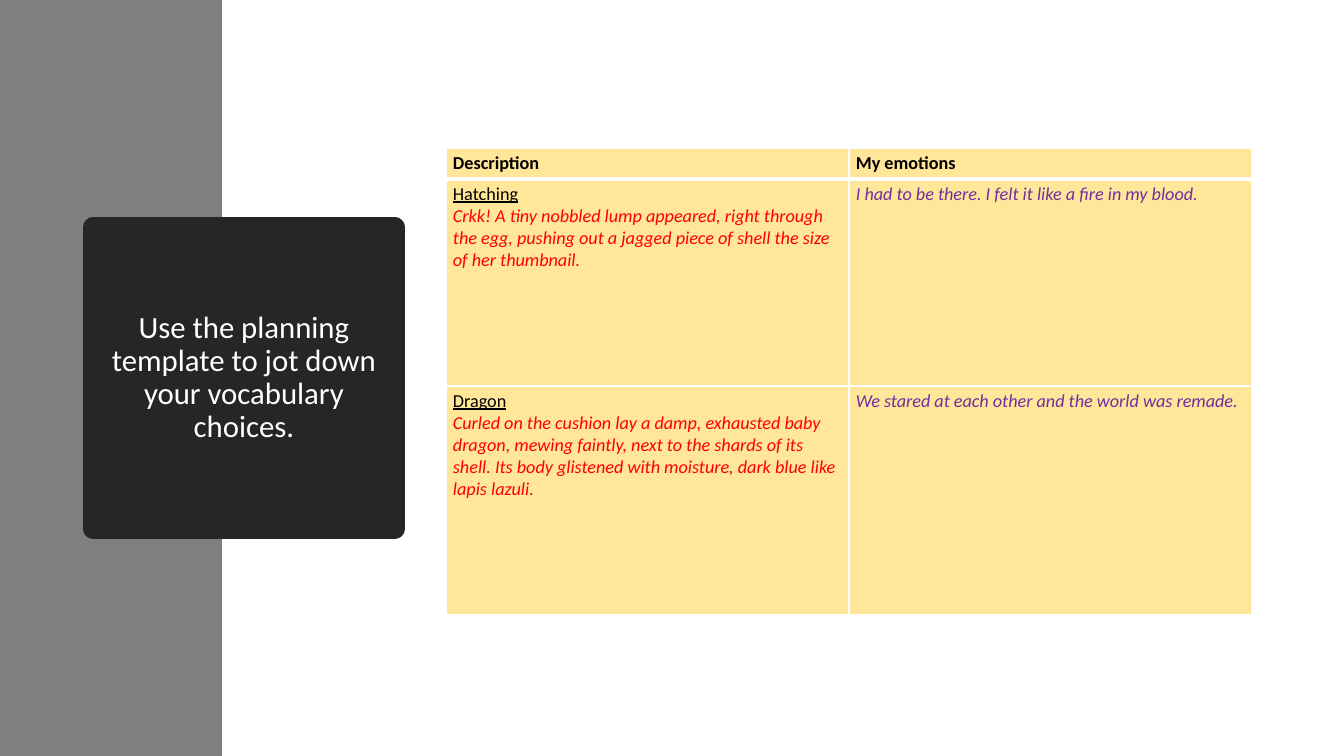
from dataclasses import dataclass
from lxml import etree
from pptx import Presentation
from pptx.dml.color import RGBColor
from pptx.enum.shapes import MSO_SHAPE
from pptx.enum.text import MSO_ANCHOR, PP_ALIGN
from pptx.oxml.ns import qn
from pptx.util import Pt

RECT = MSO_SHAPE.RECTANGLE
MIDDLE = MSO_ANCHOR.MIDDLE
LEFT, CENTER = PP_ALIGN.LEFT, PP_ALIGN.CENTER
SCALE = 914400 / 100.8


@dataclass(frozen=True)
class Theme:
    font: str = "Calibri"
    white: str = "FFFFFF"
    black: str = "000000"
    gray: str = "7F7F7F"
    dark: str = "262626"
    sand: str = "FFE699"
    red: str = "FF0000"
    purple: str = "7030A0"
    title: int = 22
    body: int = 13
    edge: float = 13.75
    thin: int = 1
    thick: int = 3


def px(n):
    return round(n * SCALE)


def rgb(color):
    return RGBColor.from_string(color)


class Board:
    def __init__(self, slide, theme):
        self.slide = slide
        self.theme = theme

    def text(self, para, words, color, size, bold=False, italic=False, under=False):
        run = para.add_run()
        run.text = words
        font = run.font
        font.name, font.size = self.theme.font, Pt(size)
        font.bold, font.italic, font.underline = bold, italic, under
        font.color.rgb = rgb(color)

    def box(self, x, y, w, h, fill, edge=0):
        shape = self.slide.shapes.add_shape(RECT, px(x), px(y), px(w), px(h))
        shape.shadow.inherit = False
        shape.fill.solid()
        shape.fill.fore_color.rgb = rgb(fill)
        if edge:
            shape.line.color.rgb = rgb(fill)
            shape.line.width = Pt(edge)
            line = shape.element.spPr.find(qn("a:ln"))
            etree.SubElement(line, qn("a:round"))
        else:
            shape.line.fill.background()
        return shape

    def title(self, x, y, w, h, words):
        shape = self.box(x, y, w, h, self.theme.dark, self.theme.edge)
        frame = shape.text_frame
        frame.word_wrap = True
        frame.vertical_anchor = MIDDLE
        para = frame.paragraphs[0]
        para.alignment = CENTER
        para.line_spacing = 0.9
        self.text(para, words, self.theme.white, self.theme.title)

    def border(self, cell, side, width):
        props = cell._tc.get_or_add_tcPr()
        line = etree.SubElement(props, qn("a:ln" + side), w=str(Pt(width)))
        fill = etree.SubElement(line, qn("a:solidFill"))
        etree.SubElement(fill, qn("a:srgbClr"), val=self.theme.white)

    def cell(self, cell, row, lines):
        theme = self.theme
        cell.margin_left = cell.margin_right = px(7)
        cell.margin_top = cell.margin_bottom = px(4)
        thick = {"B": 0, "T": 1}
        for side in "LRTB":
            width = theme.thick if thick.get(side) == row else theme.thin
            self.border(cell, side, width)
        cell.fill.solid()
        cell.fill.fore_color.rgb = rgb(theme.sand)
        frame = cell.text_frame
        for i, (words, look) in enumerate(lines):
            para = frame.add_paragraph() if i else frame.paragraphs[0]
            para.alignment = LEFT
            self.text(para, words, size=theme.body, **look)

    def table(self, x, y, cols, rows, data):
        frame = self.slide.shapes.add_table(
            len(rows), len(cols), px(x), px(y), px(sum(cols)), px(sum(rows)))
        table = frame.table
        table.first_row = table.horz_banding = False
        for col, width in zip(table.columns, cols):
            col.width = px(width)
        for r, (height, cells) in enumerate(zip(rows, data)):
            table.rows[r].height = px(height)
            for c, lines in enumerate(cells):
                self.cell(table.cell(r, c), r, lines)


def main():
    deck = Presentation()
    deck.slide_width, deck.slide_height = px(1344), px(756)
    theme = Theme()
    board = Board(deck.slides.add_slide(deck.slide_layouts[6]), theme)

    head = dict(color=theme.black, bold=True)
    topic = dict(color=theme.black, under=True)
    quote = dict(color=theme.red, italic=True)
    mood = dict(color=theme.purple, italic=True)
    data = [
        [[("Description", head)], [("My emotions", head)]],
        [[("Hatching", topic),
          ("Crkk! A tiny nobbled lump appeared, right through the egg, "
           "pushing out a jagged piece of shell the size of her thumbnail.", quote)],
         [("I had to be there. I felt it like a fire in my blood.", mood)]],
        [[("Dragon", topic),
          ("Curled on the cushion lay a damp, exhausted baby dragon, mewing "
           "faintly, next to the shards of its shell. Its body glistened with "
           "moisture, dark blue like lapis lazuli.", quote)],
         [("We stared at each other and the world was remade.", mood)]],
    ]

    board.box(0, 0, 222, 756, theme.gray)
    board.title(93, 227, 302, 302,
                "Use the planning template to jot down your vocabulary choices.")
    board.table(446, 148, [403, 403], [31, 207, 229], data)
    deck.save("out.pptx")


if __name__ == "__main__":
    main()
